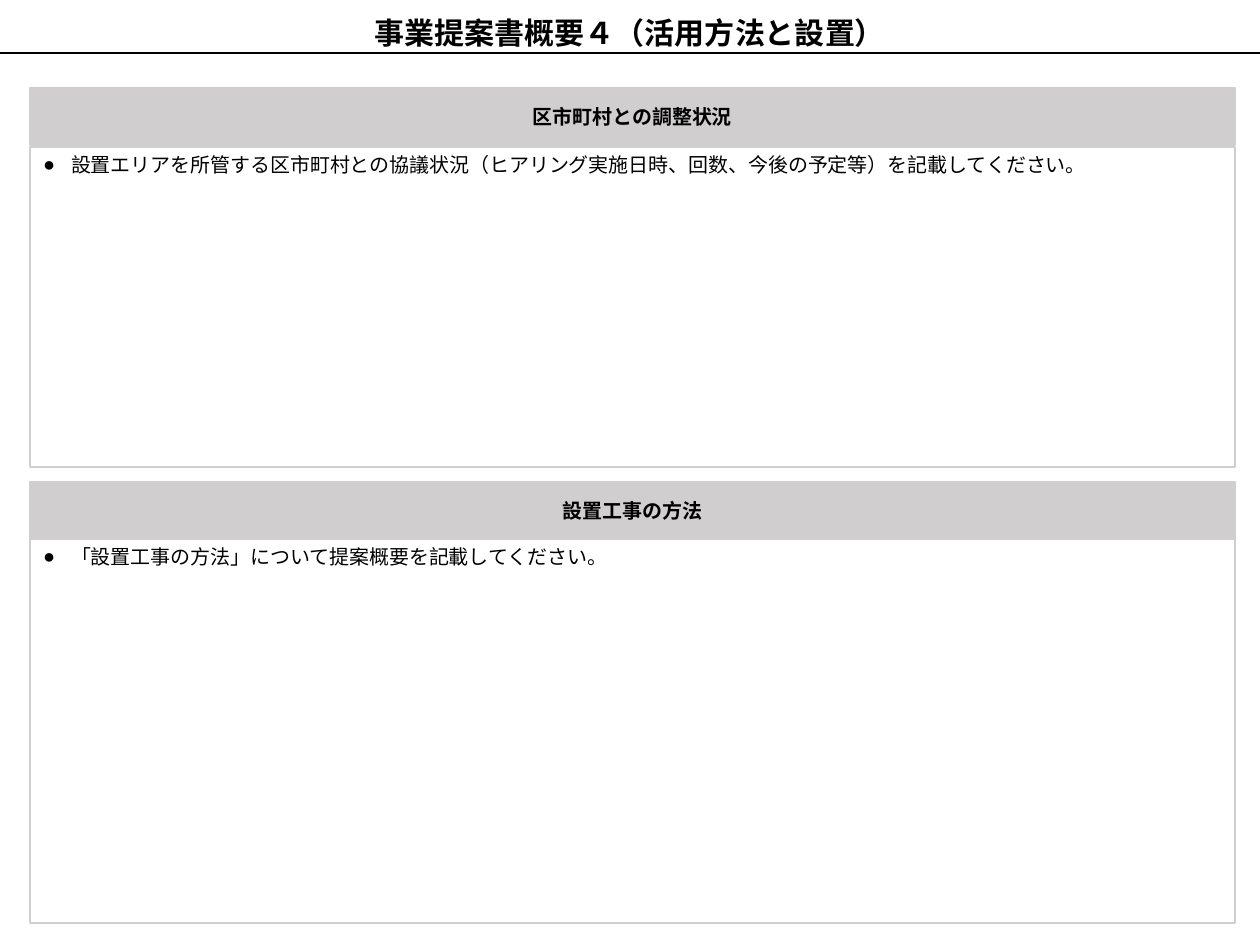
"""Build the proposal summary slide on usage and installation."""
from dataclasses import dataclass

from lxml import etree
from pptx import Presentation
from pptx.dml.color import RGBColor
from pptx.enum.shapes import MSO_CONNECTOR, MSO_SHAPE
from pptx.enum.text import MSO_ANCHOR, MSO_AUTO_SIZE, PP_ALIGN
from pptx.oxml.ns import qn
from pptx.util import Emu, Pt

PIXEL = 10160
STRAIGHT = MSO_CONNECTOR.STRAIGHT
RECTANGLE = MSO_SHAPE.RECTANGLE
TOP, MIDDLE = MSO_ANCHOR.TOP, MSO_ANCHOR.MIDDLE
NO_AUTOFIT = MSO_AUTO_SIZE.NONE
LEFT, CENTER = PP_ALIGN.LEFT, PP_ALIGN.CENTER
TWO_CONTENT_LAYOUT = 3

SLIDE_WIDTH, SLIDE_HEIGHT = 1260, 945
PANEL_LEFT, PANEL_WIDTH, HEADER_HEIGHT = 30, 1205, 57
BULLET_INDENT = 28
BLACK, WHITE, GRAY = "000000", "FFFFFF", "D0CECE"


@dataclass(frozen=True)
class Section:
    heading: str
    guidance: str
    header_top: int
    body_top: int
    body_height: int


@dataclass(frozen=True)
class TextStyle:
    font: str
    size: int
    bold: bool
    alignment: PP_ALIGN
    anchor: MSO_ANCHOR
    margins: tuple[int, int]
    wrap: bool = True


TITLE_STYLE = TextStyle("Arial", 24, True, CENTER, MIDDLE, (9, 5))
HEADER_STYLE = TextStyle("Calibri", 16, True, CENTER, MIDDLE, (13, 6), False)
BODY_STYLE = TextStyle("Calibri", 16, False, LEFT, TOP, (13, 6))

SECTIONS = (
    Section(
        "区市町村との調整状況",
        "設置エリアを所管する区市町村との協議状況（ヒアリング実施日時、回数、今後の予定等）を記載してください。",
        88, 147, 320,
    ),
    Section(
        "設置工事の方法",
        "「設置工事の方法」について提案概要を記載してください。",
        482, 539, 384,
    ),
)


def px(value: int) -> Emu:
    """Convert pixels to EMU."""
    return Emu(value * PIXEL)


def color(value: str) -> RGBColor:
    """Convert a hex string to a colour."""
    return RGBColor.from_string(value)


def place(shape, left: int, top: int, width: int, height: int) -> None:
    """Move and size a shape."""
    shape.left, shape.top = px(left), px(top)
    shape.width, shape.height = px(width), px(height)


def paint(shape, fill: str, line: str, line_width: float) -> None:
    """Set the fill and outline of a shape."""
    shape.fill.solid()
    shape.fill.fore_color.rgb = color(fill)
    shape.line.color.rgb = color(line)
    shape.line.width = Pt(line_width)


def write(shape, text: str, style: TextStyle):
    """Write one styled paragraph and return it."""
    frame = shape.text_frame
    frame.auto_size = NO_AUTOFIT
    frame.word_wrap = style.wrap
    frame.vertical_anchor = style.anchor
    horizontal, vertical = style.margins
    frame.margin_left = frame.margin_right = px(horizontal)
    frame.margin_top = frame.margin_bottom = px(vertical)
    paragraph = frame.paragraphs[0]
    paragraph.alignment = style.alignment
    run = paragraph.add_run()
    run.text = text
    run.font.name = style.font
    run.font.size = Pt(style.size)
    run.font.bold = style.bold
    run.font.color.rgb = color(BLACK)
    return paragraph


def add_bullet(paragraph) -> None:
    """Give a paragraph a round bullet with a hanging indent."""
    paragraph.space_before = Pt(6)
    properties = paragraph._p.get_or_add_pPr()
    properties.set("marL", str(px(BULLET_INDENT)))
    properties.set("indent", str(px(-BULLET_INDENT)))
    etree.SubElement(properties, qn("a:buChar"), char="●")


def draw_title(slide, text: str) -> None:
    """Draw the title band and the rule across it."""
    title = slide.shapes.title
    place(title, 0, 0, SLIDE_WIDTH, 64)
    paint(title, WHITE, WHITE, 1)
    write(title, text, TITLE_STYLE)
    rule = slide.shapes.add_connector(STRAIGHT, 0, px(53), px(SLIDE_WIDTH), px(53))
    rule.line.color.rgb = color(BLACK)
    rule.line.width = Pt(1.5)
    etree.SubElement(rule._element.spPr, qn("a:effectLst"))


def draw_section(slide, section: Section, body) -> None:
    """Draw a section header above its bulleted body."""
    place(body, PANEL_LEFT, section.body_top, PANEL_WIDTH, section.body_height)
    paint(body, WHITE, GRAY, 1.5)
    add_bullet(write(body, section.guidance, BODY_STYLE))
    header = slide.shapes.add_shape(
        RECTANGLE, px(PANEL_LEFT), px(section.header_top), px(PANEL_WIDTH), px(HEADER_HEIGHT)
    )
    header.shadow.inherit = False
    paint(header, GRAY, GRAY, 1.5)
    write(header, section.heading, HEADER_STYLE)


def main() -> None:
    """Build and save the presentation."""
    presentation = Presentation()
    presentation.slide_width = px(SLIDE_WIDTH)
    presentation.slide_height = px(SLIDE_HEIGHT)
    slide = presentation.slides.add_slide(presentation.slide_layouts[TWO_CONTENT_LAYOUT])
    draw_title(slide, "事業提案書概要４（活用方法と設置）")
    for index, section in enumerate(SECTIONS, start=1):
        draw_section(slide, section, slide.placeholders[index])
    presentation.save("out.pptx")


if __name__ == "__main__":
    main()
